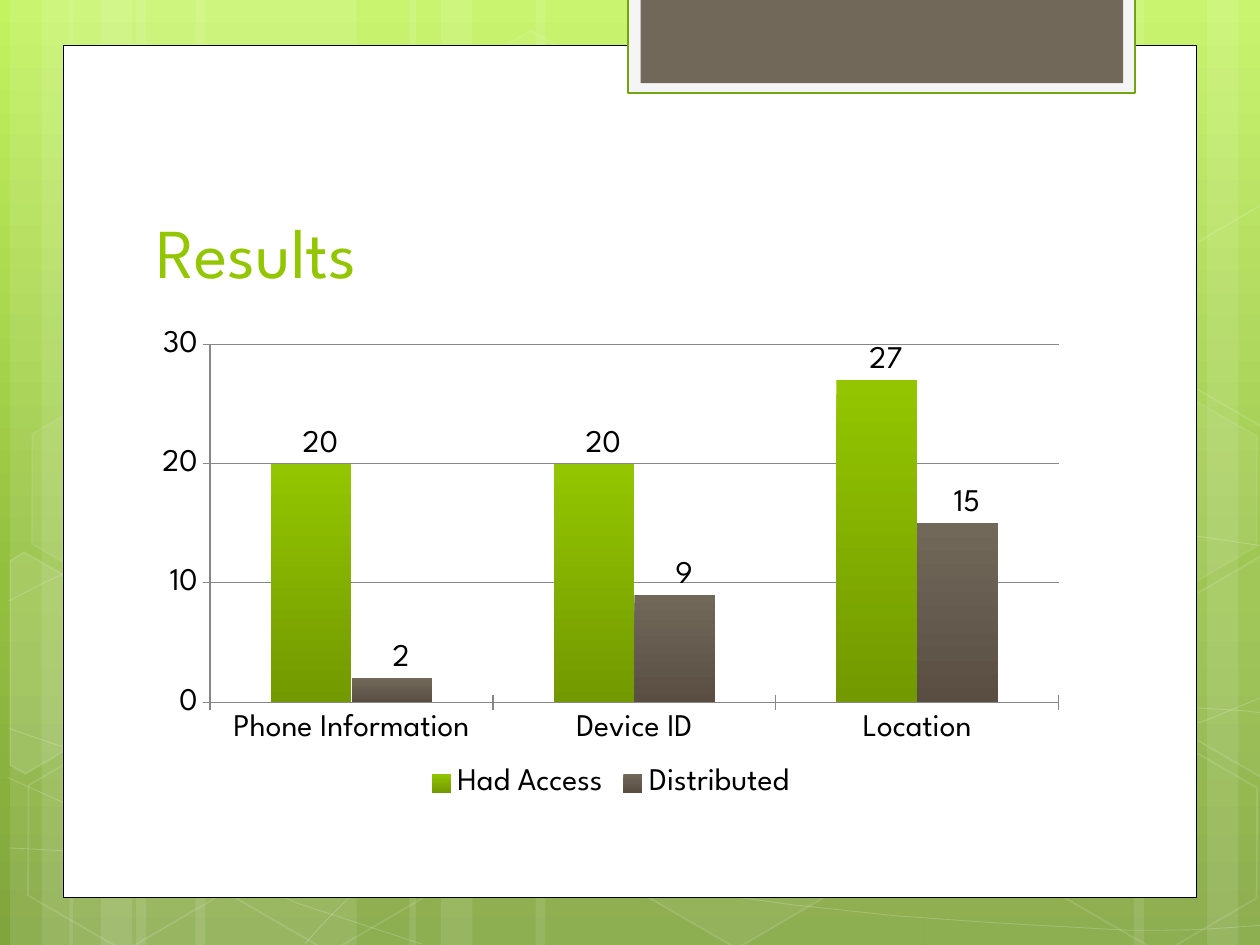
from copy import deepcopy
from dataclasses import dataclass
from math import cos, radians, sin
from typing import Any, Optional

from lxml.etree import SubElement
from pptx import Presentation
from pptx.chart.data import CategoryChartData
from pptx.dml.color import RGBColor
from pptx.enum.chart import XL_CHART_TYPE as ChartType
from pptx.enum.chart import XL_LABEL_POSITION as LabelPosition
from pptx.enum.chart import XL_LEGEND_POSITION as LegendPosition
from pptx.enum.chart import XL_TICK_MARK as TickMark
from pptx.enum.shapes import MSO_SHAPE as Preset
from pptx.enum.text import MSO_ANCHOR as Anchor
from pptx.oxml.ns import qn
from pptx.util import Inches, Pt

COLUMNS, ROWS = 100, 75
CELL = Inches(0.1)
TILT = 30
FONT = "League Spartan"
WHITE = RGBColor(0xFF, 0xFF, 0xFF)
BLACK = RGBColor(0x00, 0x00, 0x00)
GREEN = RGBColor(0x94, 0xC6, 0x00)
DARK_GREEN = RGBColor(0x72, 0x99, 0x00)
BROWN = RGBColor(0x71, 0x68, 0x5A)
DARK_BROWN = RGBColor(0x5A, 0x4E, 0x43)
TAB_EDGE = RGBColor(0x74, 0xA5, 0x10)
TAB_FACE = RGBColor(0xF5, 0xF5, 0xF5)
AXIS_GREY = RGBColor(0x87, 0x87, 0x87)
SKY = ((0, RGBColor(0xC3, 0xF3, 0x5F)), (0.62, RGBColor(0x93, 0xBF, 0x3F)),
       (1, RGBColor(0x81, 0xA5, 0x3E)))
Point = tuple[float, float]


@dataclass(frozen=True)
class Look:
    fill: Optional[RGBColor] = None
    fill_alpha: int = 100
    edge: Optional[RGBColor] = None
    edge_width: float = 1
    edge_alpha: int = 100


@dataclass(frozen=True)
class Piece:
    left: float
    top: float
    width: float
    height: float
    look: Look
    preset: Preset = Preset.RECTANGLE


@dataclass(frozen=True)
class Measure:
    name: str
    counts: tuple[int, ...]
    light: RGBColor
    dark: RGBColor


def glass(fill_alpha: int, edge_alpha: int = 12) -> Look:
    return Look(WHITE if fill_alpha else None, fill_alpha, WHITE, 1, edge_alpha)


THREAD = Look(edge=WHITE, edge_width=0.5, edge_alpha=20)
BANDS = [(base + offset, width)
         for base, widest in ((0.8, 17.5), (5.5, 17.5), (32.5, 30.8))
         for offset, width in ((10, widest), (0, 5), (2.5, 8.3))]
BANDS += [(73.3, 17.5), (95.8, 5), (90, 8.3)]
STRIPES = [Piece(left, 0, width, ROWS, Look(WHITE, 10)) for left, width in BANDS]
HEXAGONS = [Piece(left, top, 17.5, 15.2, look, Preset.HEXAGON) for left, top, look in (
    (33.4, 3.6, glass(4, 8)), (49.7, 58.9, glass(6)), (1.1, 59.1, glass(0)),
    (1.4, 31.2, glass(7, 8)), (17.4, 59.2, glass(0)), (75.3, 45.3, glass(10)),
    (83.4, 59.3, glass(0)), (83.4, 31.4, glass(7, 8)))]
PANELS = [Piece(5, 3.6, 90, 67.65, Look(WHITE, edge=BLACK, edge_width=0.5)),
          Piece(49.87, -0.2, 40.2, 7.6, Look(TAB_FACE, edge=TAB_EDGE, edge_width=1.25)),
          Piece(50.85, -0.2, 38.3, 6.8, Look(BROWN))]

THREADS: list[list[Point]] = [
    [(0.7, 67.3), (6.1, 67.6), (11.5, 67.9), (19, 67.8), (26.5, 67.7), (35.8, 67.5),
     (45.8, 66.5), (55.8, 65.5), (70, 63.6), (79.2, 61.7), (88.3, 59.8), (97.7, 56.8),
     (100.7, 55.1)],
    [(0.7, 47.7), (3.6, 46.1), (6.5, 44.6), (12.1, 43.1), (17.8, 41.6), (25.9, 39.4),
     (34.7, 38.7), (43.6, 38), (54.4, 37.9), (65.4, 38.7), (76.4, 39.5), (94.7, 42.6),
     (100.7, 43.4)],
    [(0.6, 61.7), (12.7, 67.2), (24.7, 72.7), (33.4, 74.9)],
    [(0.7, 57.8), (3.8, 58.9), (7, 60), (12.8, 61.6), (18.6, 63.1), (27.3, 65.6),
     (35.7, 67.3), (44, 69), (54.5, 70.8), (62.8, 71.8), (71.1, 72.9), (80, 73.3),
     (85.3, 73.6), (90.5, 74), (91.9, 73.8), (94.5, 73.8), (97.1, 73.7), (98.9, 73.5),
     (100.7, 73.4)],
    [(24.2, 74.9), (26, 72.9), (27.8, 70.9), (30.2, 69.1), (32.6, 67.3), (36, 65.3),
     (38.8, 63.9), (41.6, 62.5), (43.3, 61.9), (47, 60.9), (50.6, 59.9), (57.3, 58.5),
     (60.8, 57.8), (64.4, 57.1), (64.9, 57.1), (68, 56.9), (71.1, 56.6), (76, 56.3),
     (79.4, 56.2), (85, 56.1), (90, 56.2), (95.3, 56.2), (97.1, 56.3), (98.8, 56.4),
     (100.6, 56.6)]]
LEFT_CUT = [(0.8, 44.5), (1.9, 43.8), (9.6, 48.2), (9.5, 57), (2, 61.4), (0.8, 60.7)]
RIGHT_CUT = [(92.6, 48.5), (100.1, 44.1), (100.9, 44.6), (100.9, 61.3), (100.2, 61.7),
             (92.6, 57.3)]
RISE = 27.85
CUTS = ((LEFT_CUT, (3.6, 53.5), glass(10)), (RIGHT_CUT, (98.5, 52), glass(4)),
        ([(x, y - RISE) for x, y in RIGHT_CUT], (98.5, 52 - RISE), glass(0)))

CATEGORIES = ("Phone Information", "Device ID", "Location")
MEASURES = (Measure("Had Access", (20, 20, 27), GREEN, DARK_GREEN),
            Measure("Distributed", (2, 9, 15), BROWN, DARK_BROWN))


def cells(*counts: float) -> list[int]:
    return [round(count * CELL) for count in counts]


def assign(target: Any, values: dict[str, Any]) -> None:
    for name, value in values.items():
        setattr(target, name, value)


def paint(fill: Any, holder: Any, color: Optional[RGBColor], alpha: int) -> None:
    if color is None:
        fill.background()
        return
    fill.solid()
    fill.fore_color.rgb = color
    if alpha < 100:
        swatch = holder.find(qn("a:solidFill")).find(qn("a:srgbClr"))
        SubElement(swatch, qn("a:alpha")).set("val", str(alpha * 1000))


def dress(shape: Any, look: Look) -> None:
    shape.shadow.inherit = False
    properties = shape._element.spPr
    paint(shape.fill, properties, look.fill, look.fill_alpha)
    shape.line.width = Pt(look.edge_width)
    paint(shape.line.fill, properties.find(qn("a:ln")), look.edge, look.edge_alpha)


def draw_piece(slide: Any, piece: Piece) -> None:
    frame = cells(piece.left, piece.top, piece.width, piece.height)
    shape = slide.shapes.add_shape(piece.preset, *frame)
    if piece.preset == Preset.HEXAGON:
        shape.rotation = TILT
        shape.adjustments[0] = 0.285
    dress(shape, piece.look)


def draw_outline(slide: Any, points: list[Point], look: Look, close: bool) -> Any:
    start, *rest = [tuple(cells(*point)) for point in points]
    builder = slide.shapes.build_freeform(*start)
    builder.add_line_segments(rest, close=close)
    shape = builder.convert_to_shape()
    dress(shape, look)
    return shape


def untilt(points: list[Point], center: Point) -> list[Point]:
    c, s = cos(radians(TILT)), sin(radians(TILT))
    offsets = [(x - center[0], y - center[1]) for x, y in points]
    return [(center[0] + x * c + y * s, center[1] - x * s + y * c) for x, y in offsets]


def trace(knots: list[Point], steps: int = 3) -> list[Point]:
    points = [knots[0]]
    for first in range(0, len(knots) - 1, 3):
        for t in (step / steps for step in range(1, steps + 1)):
            weights = ((1 - t) ** 3, 3 * t * (1 - t) ** 2, 3 * t * t * (1 - t), t ** 3)
            bend = list(zip(weights, knots[first:first + 4]))
            points.append((sum(w * x for w, (x, _) in bend), sum(w * y for w, (_, y) in bend)))
    return points


def shade(fill: Any, colors: tuple[RGBColor, ...]) -> None:
    for stop, color in zip(fill.gradient_stops, colors):
        stop.color.rgb = color


def draw_sky(slide: Any) -> None:
    fill = slide.background.fill
    fill.gradient()
    fill.gradient_angle = 270
    stops = slide._element.find(".//" + qn("a:gsLst"))
    stops.insert(1, deepcopy(stops[0]))
    for stop, (position, _) in zip(fill.gradient_stops, SKY):
        stop.position = position
    shade(fill, tuple(color for _, color in SKY))


def draw_title(slide: Any) -> None:
    frame = slide.shapes.add_textbox(*cells(11.4, 11.2, 76.8, 12.5)).text_frame
    assign(frame, {"word_wrap": True, "vertical_anchor": Anchor.BOTTOM})
    run = frame.paragraphs[0].add_run()
    run.text = "Results"
    assign(run.font, {"name": FONT, "size": Pt(40)})
    run.font.color.rgb = GREEN


def draw_chart(slide: Any) -> None:
    data = CategoryChartData()
    data.categories = CATEGORIES
    for measure in MEASURES:
        data.add_series(measure.name, measure.counts)
    frame = cells(11.4, 25.4, 74.1, 38.4)
    chart = slide.shapes.add_chart(ChartType.COLUMN_CLUSTERED, *frame, data).chart
    assign(chart, {"has_title": False, "has_legend": True})
    assign(chart.font, {"name": FONT, "size": Pt(18)})
    chart.font.color.rgb = BLACK
    assign(chart.legend, {"position": LegendPosition.BOTTOM, "include_in_layout": False})
    assign(chart.value_axis, {"major_unit": 10, "has_major_gridlines": True})
    for axis in (chart.category_axis, chart.value_axis):
        axis.major_tick_mark = TickMark.CROSS
        axis.format.line.color.rgb = AXIS_GREY
    chart.value_axis.major_gridlines.format.line.color.rgb = AXIS_GREY
    assign(chart.plots[0], {"gap_width": 150, "overlap": 0, "vary_by_categories": False})
    for series, measure in zip(chart.plots[0].series, MEASURES):
        series.format.fill.gradient()
        series.format.fill.gradient_angle = 270
        shade(series.format.fill, (measure.light, measure.dark))
        series.data_labels.show_value = True
        for index in range(len(CATEGORIES)):
            series.points[index].data_label.position = LabelPosition.OUTSIDE_END
        for label in series._element.iter(qn("c:dLbl")):
            layout = label.makeelement(qn("c:layout"))
            label.insert(1, layout)
            SubElement(SubElement(layout, qn("c:manualLayout")), qn("c:x")).set("val", "0.01")


def main() -> None:
    deck = Presentation()
    assign(deck, {"slide_width": COLUMNS * CELL, "slide_height": ROWS * CELL})
    slide = deck.slides.add_slide(deck.slide_layouts[6])
    draw_sky(slide)
    for stripe in STRIPES:
        draw_piece(slide, stripe)
    for thread in THREADS:
        draw_outline(slide, trace(thread), THREAD, close=False)
    for hexagon in HEXAGONS:
        draw_piece(slide, hexagon)
    for cut, center, look in CUTS:
        draw_outline(slide, untilt(cut, center), look, close=True).rotation = TILT
    for panel in PANELS:
        draw_piece(slide, panel)
    draw_title(slide)
    draw_chart(slide)
    deck.save("out.pptx")


if __name__ == "__main__":
    main()
